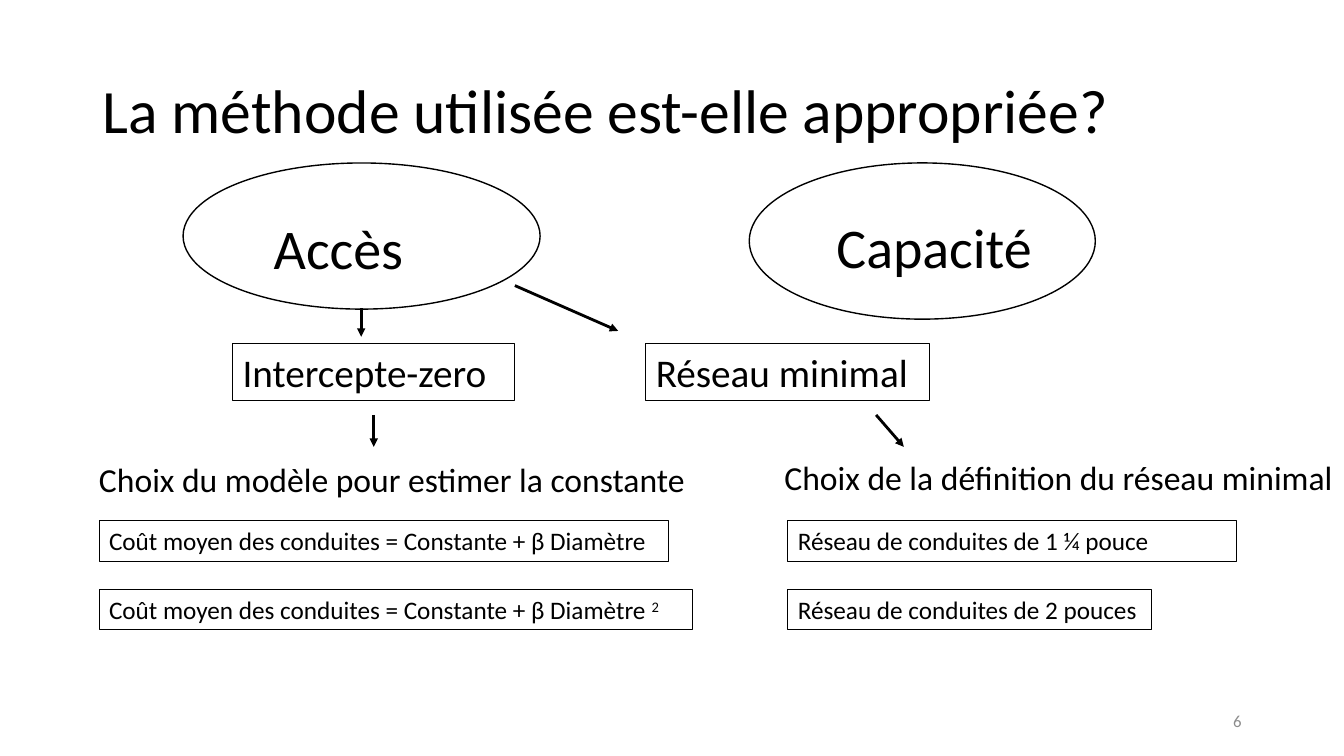
from dataclasses import dataclass

from lxml import etree
from pptx import Presentation
from pptx.dml.color import RGBColor
from pptx.enum.shapes import MSO_CONNECTOR, MSO_SHAPE
from pptx.enum.text import MSO_ANCHOR, PP_ALIGN
from pptx.oxml.ns import qn
from pptx.util import Emu, Inches, Pt

ELLIPSE = MSO_SHAPE.OVAL
RECTANGLE = MSO_SHAPE.RECTANGLE
STRAIGHT = MSO_CONNECTOR.STRAIGHT
TOP = MSO_ANCHOR.TOP
MIDDLE = MSO_ANCHOR.MIDDLE
LEFT = PP_ALIGN.LEFT
RIGHT = PP_ALIGN.RIGHT

COLUMNS, ROWS = 160, 90
FONT = "Calibri"
BLACK = "000000"
GREY = "8C8C8C"
TITLE_ONLY = 5


@dataclass
class Area:
    column: float
    row: float
    columns: float
    rows: float


@dataclass
class Label:
    text: str
    area: Area
    size: int
    wrap: bool = True
    superscript: str = ""


@dataclass
class Arrow:
    start: tuple[float, float]
    end: tuple[float, float]


TITLE_AREA = Area(11, 4.8, 138, 17.4)
NUMBER_AREA = Area(113, 83.4, 36, 4.8)

TOPIC_OUTLINES = [
    Area(21.8, 19.4, 42.5, 17.4),
    Area(89.2, 19.4, 41.2, 18.6),
]
PLAIN_LABELS = [
    Label("Accès", Area(31.4, 24.8, 23, 9.2), 40),
    Label("Capacité", Area(98.4, 24.7, 29, 9.2), 40),
    Label("Choix du modèle pour estimer la constante",
          Area(10.6, 54, 72.8, 6), 24, wrap=False),
    Label("Choix de la définition du réseau minimal",
          Area(92.2, 53.8, 67.8, 6), 24, wrap=False),
]
FRAMED_LABELS = [
    Label("Intercepte-zero", Area(27.7, 40.9, 33.6, 6.8), 28),
    Label("Réseau minimal", Area(76.9, 40.9, 33.8, 6.8), 28),
    Label("Coût moyen des conduites = Constante + β Diamètre",
          Area(11.8, 62, 67.8, 4.8), 18),
    Label("Coût moyen des conduites = Constante + β Diamètre ",
          Area(11.8, 70.2, 70.7, 4.8), 18, superscript="2"),
    Label("Réseau de conduites de 1 ¼ pouce", Area(93.8, 62, 53.4, 4.8), 18),
    Label("Réseau de conduites de 2 pouces", Area(93.8, 70.2, 43.3, 4.8), 18),
]
ARROWS = [
    Arrow((43, 36.7), (43, 40.1)),
    Arrow((61.3, 34), (73.6, 39.4)),
    Arrow((44.5, 49.4), (44.5, 53.2)),
    Arrow((104.3, 49.4), (107.6, 53.2)),
]

deck = Presentation()
deck.slide_width = Inches(13.33)
deck.slide_height = Inches(7.5)
page = deck.slides.add_slide(deck.slide_layouts[TITLE_ONLY])


def across(columns: float) -> Emu:
    return Emu(round(deck.slide_width * columns / COLUMNS))


def down(rows: float) -> Emu:
    return Emu(round(deck.slide_height * rows / ROWS))


def bounds(area: Area) -> tuple[Emu, Emu, Emu, Emu]:
    return across(area.column), down(area.row), across(area.columns), down(area.rows)


def color(value: str) -> RGBColor:
    return RGBColor.from_string(value)


def write(box, text: str, *, size: int, fill: str = BLACK, align=LEFT, anchor=TOP,
          wrap: bool = True, superscript: str = "", spacing: float = 1.0) -> None:
    frame = box.text_frame
    frame.word_wrap = wrap
    frame.vertical_anchor = anchor
    para = frame.paragraphs[0]
    para.alignment = align
    para.line_spacing = spacing
    for content in filter(None, (text, superscript)):
        span = para.add_run()
        span.text = content
        span.font.name = FONT
        span.font.size = Pt(size)
        span.font.color.rgb = color(fill)
    if superscript:
        span.font._element.set("baseline", "30000")


def draw_outline(kind, area: Area, width: float):
    box = page.shapes.add_shape(kind, *bounds(area))
    box.shadow.inherit = False
    box.fill.background()
    box.line.color.rgb = color(BLACK)
    box.line.width = Pt(width)
    return box


def write_label(box, label: Label) -> None:
    write(box, label.text, size=label.size, wrap=label.wrap,
          superscript=label.superscript)


def draw_arrow(arrow: Arrow) -> None:
    (start_column, start_row), (end_column, end_row) = arrow.start, arrow.end
    connector = page.shapes.add_connector(
        STRAIGHT, across(start_column), down(start_row), across(end_column), down(end_row))
    connector.line.color.rgb = color(BLACK)
    connector.line.width = Pt(2)
    properties = connector._element.spPr
    etree.SubElement(properties.find(qn("a:ln")), qn("a:tailEnd"), type="triangle")
    etree.SubElement(properties, qn("a:effectLst"))


def main() -> None:
    title = page.shapes.title
    title.left, title.top, title.width, title.height = bounds(TITLE_AREA)
    write(title, "La méthode utilisée est-elle appropriée?", size=44,
          anchor=MIDDLE, spacing=0.9)
    for area in TOPIC_OUTLINES:
        draw_outline(ELLIPSE, area, 1)
    for label in PLAIN_LABELS:
        write_label(page.shapes.add_textbox(*bounds(label.area)), label)
    for label in FRAMED_LABELS:
        write_label(draw_outline(RECTANGLE, label.area, 0.75), label)
    for arrow in ARROWS:
        draw_arrow(arrow)
    number = page.shapes.add_textbox(*bounds(NUMBER_AREA))
    write(number, "6", size=12, fill=GREY, align=RIGHT, anchor=MIDDLE)
    deck.save("out.pptx")


if __name__ == "__main__":
    main()
